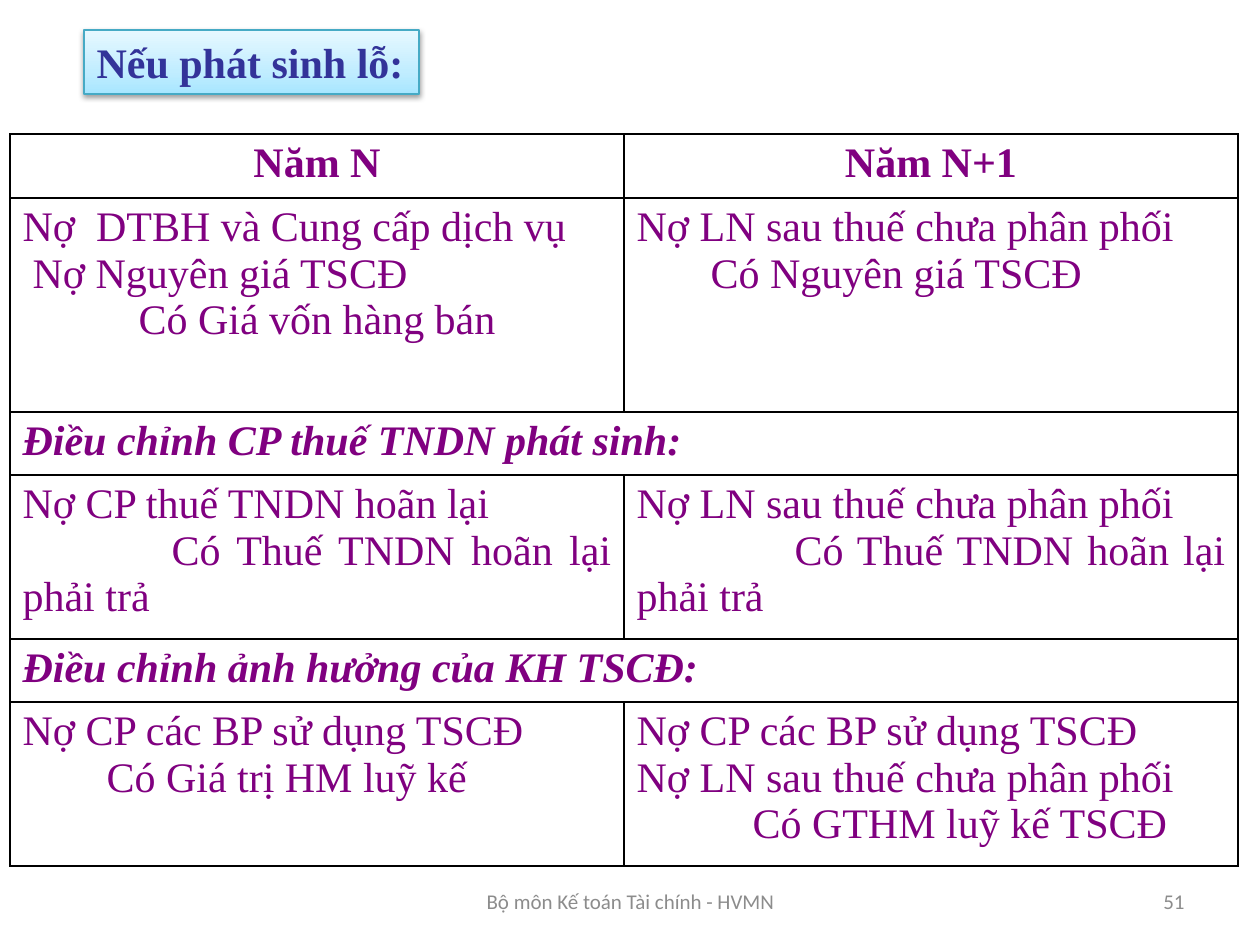
from lxml.etree import SubElement
from pptx import Presentation
from pptx.dml.color import RGBColor
from pptx.enum.text import MSO_ANCHOR, MSO_AUTO_SIZE, PP_ALIGN
from pptx.oxml import parse_xml
from pptx.oxml.ns import nsdecls, qn
from pptx.util import Pt

EMU_PER_PX = 914400 / 126


def px(length):
    return round(length * EMU_PER_PX)


def color(hex_code):
    return RGBColor.from_string(hex_code)


def write(paragraph, text, *, font, size, ink, bold=False, italic=False,
          align=PP_ALIGN.LEFT, indent=0):
    """Add one formatted run; indent moves the first line only."""
    run = paragraph.add_run()
    run.text = text
    run.font.name, run.font.size = font, Pt(size)
    run.font.bold, run.font.italic = bold, italic
    run.font.color.rgb = color(ink)
    paragraph.alignment = align
    if indent:
        properties = paragraph._p.get_or_add_pPr()
        properties.set("marL", "0")
        properties.set("indent", str(px(indent)))


class LedgerSlide:
    SERIF = {"font": "Times New Roman", "size": 24}
    ENTRY = {**SERIF, "ink": "800080"}
    HEADING = {**SERIF, "ink": "333399", "bold": True}
    FOOTER = {"font": "Calibri", "size": 12, "ink": "8C8C8C"}
    TITLE_STOPS = ((0, "A7E6FF"), (35, "C1EDFF"), (100, "E7F8FF"))

    def __init__(self, presentation):
        self.slide = presentation.slides.add_slide(presentation.slide_layouts[5])

    def title(self, text, left, top, width, height):
        title = self.slide.shapes.title
        title.left, title.top = px(left), px(top)
        title.width, title.height = px(width), px(height)
        # Three-stop gradient, outline and soft shadow
        stops = "".join(f'<a:gs pos="{at * 1000}"><a:srgbClr val="{shade}"/></a:gs>'
                        for at, shade in self.TITLE_STOPS)
        properties = title._element.spPr
        properties.append(parse_xml(
            f'<a:gradFill {nsdecls("a")}><a:gsLst>{stops}</a:gsLst>'
            '<a:lin ang="16200000" scaled="0"/></a:gradFill>'))
        title.line.color.rgb = color("46AAC5")
        title.line.width = Pt(0.75)
        properties.append(parse_xml(
            f'<a:effectLst {nsdecls("a")}><a:outerShdw blurRad="40000" dist="20000" '
            'dir="5400000" rotWithShape="0"><a:srgbClr val="000000">'
            '<a:alpha val="38000"/></a:srgbClr></a:outerShdw></a:effectLst>'))
        frame = title.text_frame
        frame.auto_size, frame.word_wrap = MSO_AUTO_SIZE.NONE, False
        frame.vertical_anchor = MSO_ANCHOR.MIDDLE
        write(frame.paragraphs[0], text, **self.HEADING)

    def footer(self, text, left, width, align):
        box = self.slide.shapes.add_textbox(px(left), px(876), px(width), px(50))
        frame = box.text_frame
        frame.word_wrap = True
        frame.vertical_anchor = MSO_ANCHOR.MIDDLE
        write(frame.paragraphs[0], text, align=align, **self.FOOTER)

    def border(self, cell):
        properties = cell._tc.get_or_add_tcPr()
        for position, side in enumerate(("lnL", "lnR", "lnT", "lnB")):
            line = SubElement(properties, qn(f"a:{side}"), w=str(Pt(1)))
            fill = SubElement(line, qn("a:solidFill"))
            SubElement(fill, qn("a:srgbClr"), val="000000")
            properties.insert(position, line)

    def fill_cell(self, cell, lines, **style):
        frame = cell.text_frame
        for number, (text, indent) in enumerate(lines):
            paragraph = frame.add_paragraph() if number else frame.paragraphs[0]
            write(paragraph, text, indent=indent, **{**self.ENTRY, **style})

    def table(self, rows, heights, left, top, column_width):
        table = self.slide.shapes.add_table(
            len(rows), 2, px(left), px(top), px(2 * column_width), px(sum(heights))).table
        table.first_row = table.horz_banding = False
        for column in table.columns:
            column.width = px(column_width)
        for number, (cells, height) in enumerate(zip(rows, heights)):
            table.rows[number].height = px(height)
            pair = table.cell(number, 0), table.cell(number, 1)
            for cell in pair:
                cell.fill.background()
                self.border(cell)
            # A single entry spans both years
            if len(cells) == 1:
                pair[0].merge(pair[1])
            style = {"align": PP_ALIGN.JUSTIFY}
            if number == 0:
                style = {"align": PP_ALIGN.CENTER, "bold": True}
            elif len(cells) == 1:
                style.update(bold=True, italic=True)
            for cell, lines in zip(pair, cells):
                self.fill_cell(cell, lines, **style)


# Each cell lists its lines as (text, first-line indent in px)
ROWS = [
    ([("Năm N", 0)], [("Năm N+1", 0)]),
    ([("Nợ  DTBH và Cung cấp dịch vụ", 0),
      ("Nợ Nguyên giá TSCĐ", 10),
      ("Có Giá vốn hàng bán", 116)],
     [("Nợ LN sau thuế chưa phân phối", 0),
      ("Có Nguyên giá TSCĐ", 74)]),
    ([("Điều chỉnh CP thuế TNDN phát sinh:", 0)],),
    ([("Nợ CP thuế TNDN hoãn lại", 0),
      ("Có Thuế TNDN hoãn lại phải trả", 149)],
     [("Nợ LN sau thuế chưa phân phối", 0),
      ("Có Thuế TNDN hoãn lại phải trả", 158)]),
    ([("Điều chỉnh ảnh hưởng của KH TSCĐ:", 0)],),
    ([("Nợ CP các BP sử dụng TSCĐ", 0),
      ("Có Giá trị HM luỹ kế", 84)],
     [("Nợ CP các BP sử dụng TSCĐ", 0),
      ("Nợ LN sau thuế chưa phân phối", 0),
      ("Có GTHM luỹ kế TSCĐ", 116)]),
]
HEIGHTS = [64, 214, 63, 164, 63, 164]


def main():
    presentation = Presentation()
    presentation.slide_width, presentation.slide_height = px(1260), px(945)
    ledger = LedgerSlide(presentation)
    ledger.title("Nếu phát sinh lỗ:", 84, 30, 335, 64)
    ledger.table(ROWS, HEIGHTS, left=10, top=134, column_width=614)
    # Footer line: department and page number
    ledger.footer("Bộ môn Kế toán Tài chính - HVMN", 431, 399, PP_ALIGN.CENTER)
    ledger.footer("51", 903, 294, PP_ALIGN.RIGHT)
    presentation.save("out.pptx")


if __name__ == "__main__":
    main()
